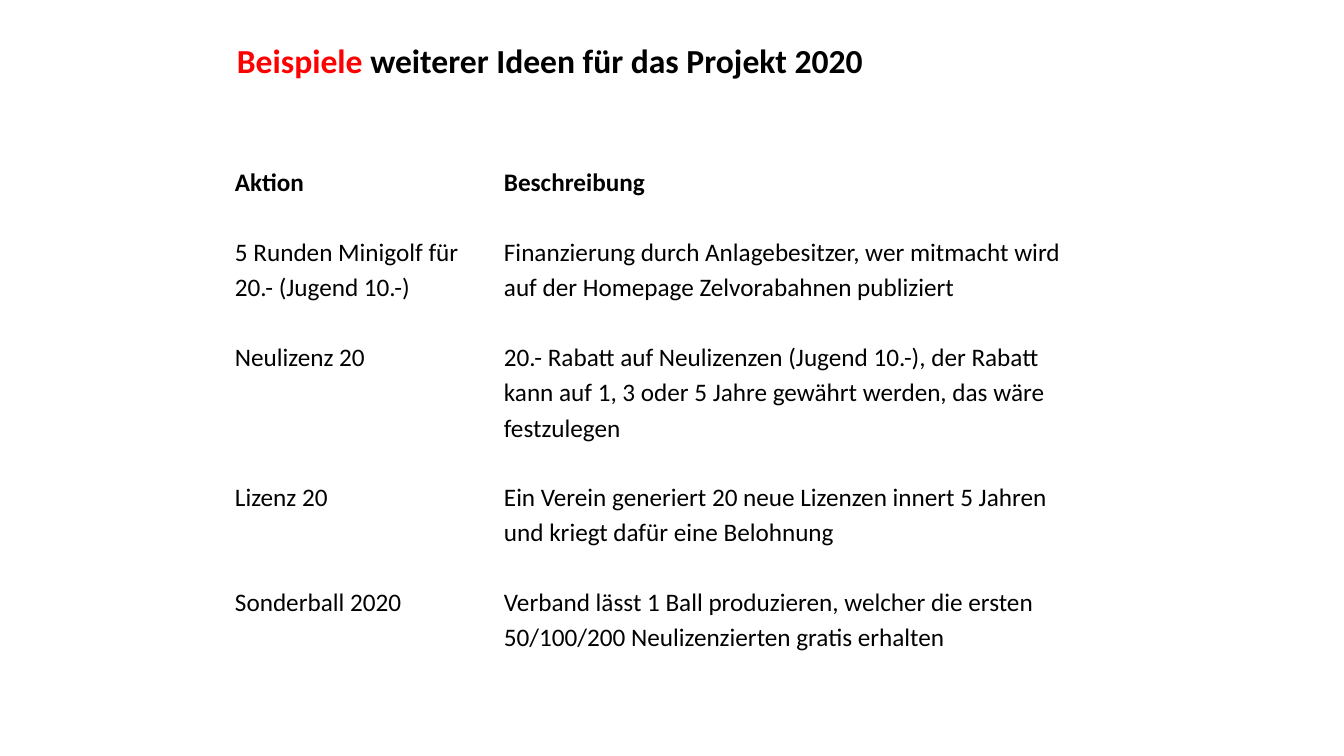
"""Builds the slide with further project ideas for 2020."""
from pptx import Presentation
from pptx.dml.color import RGBColor
from pptx.enum.text import MSO_ANCHOR
from pptx.util import Pt

HEADING = [("Beispiele", "FF0000"), (" weiterer Ideen für das Projekt 2020", "000000")]
IDEAS = [
    ("Aktion", "Beschreibung"),
    ("5 Runden Minigolf für 20.- (Jugend 10.-)",
     "Finanzierung durch Anlagebesitzer, wer mitmacht wird auf der Homepage Zelvorabahnen publiziert"),
    ("Neulizenz 20",
     "20.- Rabatt auf Neulizenzen (Jugend 10.-), der Rabatt kann auf 1, 3 oder 5 Jahre gewährt werden, "
     "das wäre festzulegen"),
    ("Lizenz 20",
     "Ein Verein generiert 20 neue Lizenzen innert 5 Jahren und kriegt dafür eine Belohnung"),
    ("Sonderball 2020",
     "Verband lässt 1 Ball produzieren, welcher die ersten 50/100/200 Neulizenzierten gratis erhalten"),
    ("", ""),
    ("", ""),
    ("", ""),
]
COLUMN_WIDTHS = [269, 573]
ROW_HEIGHTS = [70, 105, 140, 105, 70, 33, 33, 33]


def px(length):
    return round(length * 914400 / 100.8)


def style(run, size, color, bold):
    run.font.name = "Calibri"
    run.font.size = Pt(size)
    run.font.bold = bold
    run.font.color.rgb = RGBColor.from_string(color)


def add_heading(slide):
    heading = slide.shapes.add_textbox(px(227), 0, px(842), px(126)).text_frame
    heading.word_wrap = True
    heading.vertical_anchor = MSO_ANCHOR.MIDDLE
    line = heading.paragraphs[0]
    line.line_spacing = 0.9
    for words, color in HEADING:
        run = line.add_run()
        run.text = words
        style(run, 24, color, True)


def add_ideas(slide):
    ideas = slide.shapes.add_table(
        len(IDEAS), len(COLUMN_WIDTHS), px(228), px(163),
        px(sum(COLUMN_WIDTHS)), px(sum(ROW_HEIGHTS))).table
    ideas.first_row = ideas.horz_banding = False
    for column, width in zip(ideas.columns, COLUMN_WIDTHS):
        column.width = px(width)
    for r, (row, height, entries) in enumerate(zip(ideas.rows, ROW_HEIGHTS, IDEAS)):
        row.height = px(height)
        for cell, entry in zip(row.cells, entries):
            cell.fill.background()
            cell.margin_left = cell.margin_right = px(7)
            cell.margin_top = cell.margin_bottom = 0
            if entry:
                cell.text_frame.text = entry
                paragraph = cell.text_frame.paragraphs[0]
                paragraph.line_spacing = 1.15
                style(paragraph.runs[0], 18, "000000", r == 0)


def main():
    deck = Presentation()
    deck.slide_width, deck.slide_height = px(1344), px(756)
    slide = deck.slides.add_slide(deck.slide_layouts[6])
    add_heading(slide)
    add_ideas(slide)
    deck.save("out.pptx")


if __name__ == "__main__":
    main()
